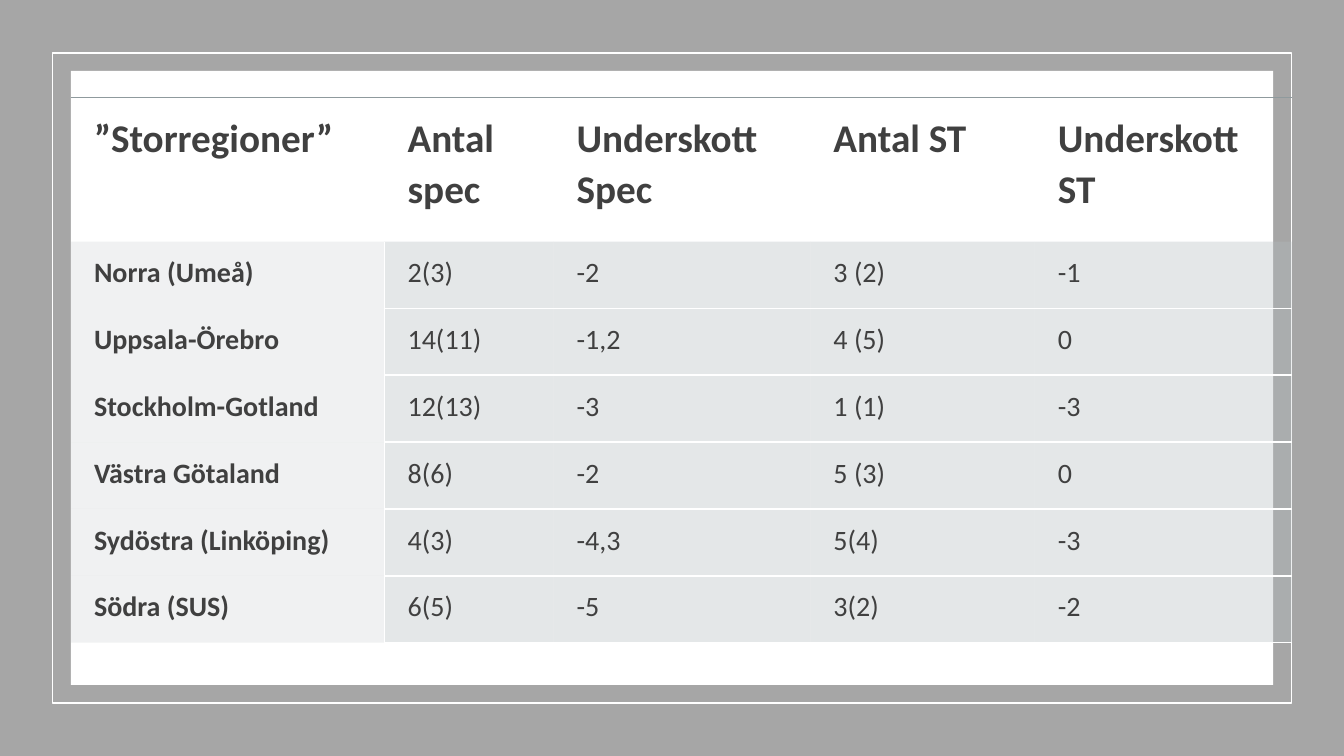
from lxml import etree
from pptx import Presentation
from pptx.dml.color import RGBColor
from pptx.enum.shapes import MSO_SHAPE
from pptx.oxml.ns import qn
from pptx.util import Pt

FONT = "Calibri"
TEXT = "404040"
GREY = "A6A6A6"
WHITE = "FFFFFF"
TINT = "B4BCBE"
RULE = "8F9A9D"

COLS = [224, 120.7, 183.5, 160.3, 183.5]
HEADER_HEIGHT, ROW_HEIGHT = 103, 47.75
ROWS = [
    ["”Storregioner”", "Antal spec", "Underskott Spec", "Antal ST", "Underskott ST"],
    ["Norra (Umeå)", "2(3)", "-2", "3 (2)", "-1"],
    ["Uppsala-Örebro", "14(11)", "-1,2", "4 (5)", "0"],
    ["Stockholm-Gotland", "12(13)", "-3", "1 (1)", "-3"],
    ["Västra Götaland", "8(6)", "-2", "5 (3)", "0"],
    ["Sydöstra (Linköping)", "4(3)", "-4,3", "5(4)", "-3"],
    ["Södra (SUS)", "6(5)", "-5", "3(2)", "-2"],
]


def rgb(color):
    return RGBColor.from_string(color)


def add_rect(slide, x, y, w, h, fill=None, line=None):
    sp = slide.shapes.add_shape(MSO_SHAPE.RECTANGLE, Pt(x), Pt(y), Pt(w), Pt(h))
    sp.shadow.inherit = False
    if fill:
        sp.fill.solid()
        sp.fill.fore_color.rgb = rgb(fill)
    else:
        sp.fill.background()
    if line:
        sp.line.color.rgb = rgb(line)
        sp.line.width = Pt(1)
    else:
        sp.line.fill.background()


def set_alpha(solid_fill, percent):
    clr = solid_fill.find(qn("a:srgbClr"))
    etree.SubElement(clr, qn("a:alpha"), val=str(percent * 1000))


def set_borders(cell, borders):
    """Draw the sides in borders as side: (colour, opacity) and clear the others."""
    tcPr = cell._tc.get_or_add_tcPr()
    for side in "LRTB":
        ln = etree.SubElement(tcPr, qn(f"a:ln{side}"), w=str(Pt(1.5)))
        if side in borders:
            color, opacity = borders[side]
            solid = etree.SubElement(ln, qn("a:solidFill"))
            etree.SubElement(solid, qn("a:srgbClr"), val=color)
            set_alpha(solid, opacity)
        else:
            etree.SubElement(ln, qn("a:noFill"))


def set_fill(cell, color, opacity):
    cell.fill.solid()
    cell.fill.fore_color.rgb = rgb(color)
    set_alpha(cell._tc.tcPr.find(qn("a:solidFill")), opacity)


def write_cell(cell, text, size, bold, margin):
    cell.margin_left = Pt(16.6)
    cell.margin_right = cell.margin_top = cell.margin_bottom = Pt(margin)
    p = cell.text_frame.paragraphs[0]
    p.line_spacing = 1.07
    p.space_after = Pt(8)
    r = p.add_run()
    r.text = text
    r.font.name = FONT
    r.font.size = Pt(size)
    r.font.bold = bold
    r.font.color.rgb = rgb(TEXT)


def body_borders(row, col):
    white = (WHITE, 100)
    if col == 0:
        return {"R": white}
    borders = {"B": white}
    if col == 1:
        borders["L"] = white
    if row > 1:
        borders["T"] = white
    return borders


def add_region_table(slide, x, y):
    height = HEADER_HEIGHT + ROW_HEIGHT * (len(ROWS) - 1)
    frame = slide.shapes.add_table(len(ROWS), len(COLS), Pt(x), Pt(y),
                                   Pt(sum(COLS)), Pt(height))
    table = frame.table
    table.first_row = table.horz_banding = False
    for column, width in zip(table.columns, COLS):
        column.width = Pt(width)
    for i, texts in enumerate(ROWS):
        table.rows[i].height = Pt(ROW_HEIGHT if i else HEADER_HEIGHT)
        for j, text in enumerate(texts):
            cell = table.cell(i, j)
            if i == 0:
                write_cell(cell, text, 28, True, 10)
                set_borders(cell, {"T": (RULE, 60)})
                cell.fill.background()
            else:
                write_cell(cell, text, 20, j == 0, 8.6)
                set_borders(cell, body_borders(i, j))
                set_fill(cell, TINT, 35 if j else 20)


def main():
    prs = Presentation()
    prs.slide_width, prs.slide_height = Pt(960), Pt(540)
    slide = prs.slides.add_slide(prs.slide_layouts[6])
    add_rect(slide, 0, 0, 960, 540, fill=GREY)
    add_rect(slide, 37.6, 38, 885, 464.2, line=WHITE)
    add_rect(slide, 50.6, 50.6, 858.8, 438.6, fill=WHITE)
    add_region_table(slide, 50.6, 69.6)
    prs.save("out.pptx")


if __name__ == "__main__":
    main()
